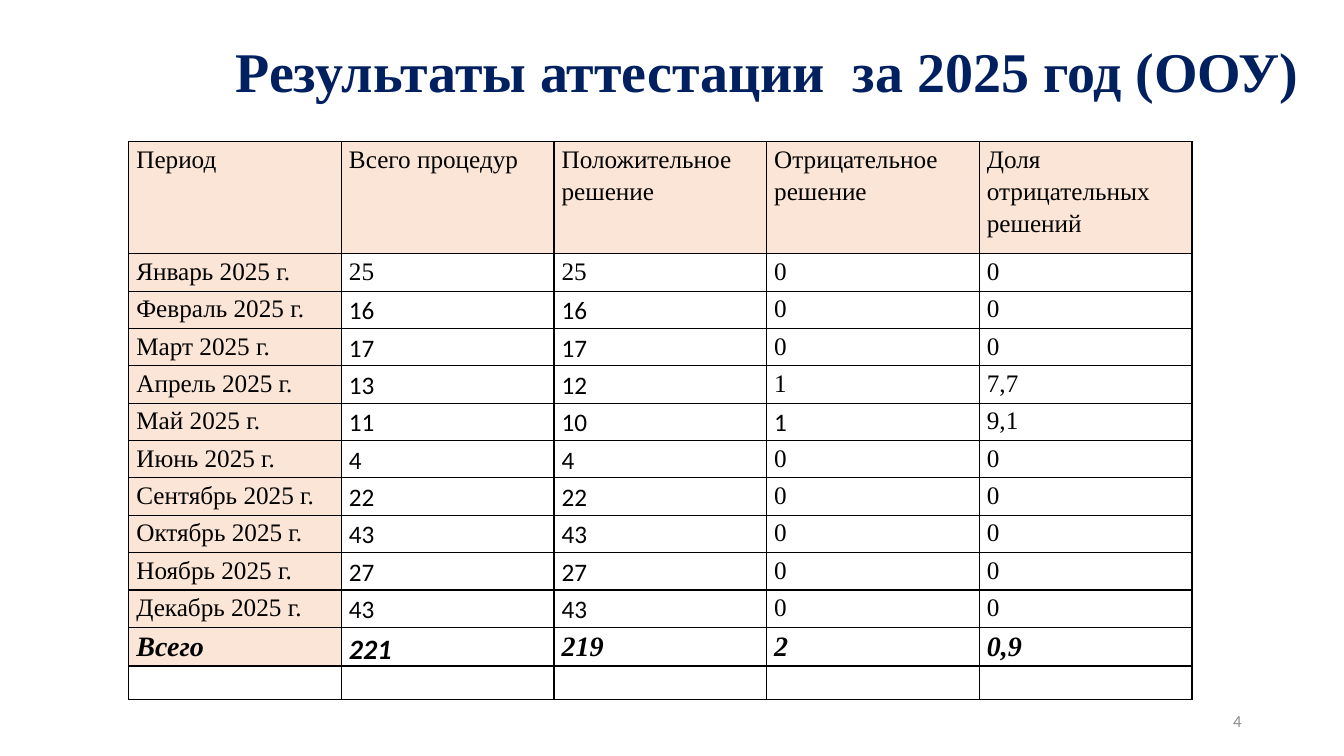
import pptx
import pptx.util
import pptx.dml.color
import pptx.enum.text
import pptx.oxml

Pt = pptx.util.Pt
ALIGN = pptx.enum.text.PP_ALIGN
ANCHOR = pptx.enum.text.MSO_ANCHOR
NS = "http://schemas.openxmlformats.org/drawingml/2006/main"

HEAD = ["Период", "Всего процедур", "Положительное решение",
        "Отрицательное решение", "Доля отрицательных решений"]
MONTHS = [
    ("Январь", "25", "25", "0", "0"),
    ("Февраль", "16", "16", "0", "0"),
    ("Март", "17", "17", "0", "0"),
    ("Апрель", "13", "12", "1", "7,7"),
    ("Май", "11", "10", "1", "9,1"),
    ("Июнь", "4", "4", "0", "0"),
    ("Сентябрь", "22", "22", "0", "0"),
    ("Октябрь", "43", "43", "0", "0"),
    ("Ноябрь", "27", "27", "0", "0"),
    ("Декабрь", "43", "43", "0", "0"),
]
TOTAL = ["Всего", "221", "219", "2", "0,9"]


def color(code):
    return pptx.dml.color.RGBColor.from_string(code)


class Page:
    serif, sans = "Times New Roman", "Calibri"
    ink, navy, gray, peach = "000000", "002060", "8C8C8C", "FBE5D6"

    def __init__(self, slide):
        self.slide = slide

    def style(self, par, face, size, tint, bold=False, slant=False):
        for run in par.runs:
            font = run.font
            font.name, font.size = face, Pt(size)
            font.bold, font.italic = bold, slant
            font.color.rgb = color(tint)

    def text(self, words, box, align, anchor, *look):
        frame = self.slide.shapes.add_textbox(*map(Pt, box)).text_frame
        frame.word_wrap = True
        frame.vertical_anchor = anchor
        frame.text = words
        par = frame.paragraphs[0]
        par.alignment = align
        self.style(par, *look)

    def border(self, cell):
        props = cell._tc.get_or_add_tcPr()
        for side in "LRTB":
            props.append(pptx.oxml.parse_xml(
                f'<a:ln{side} xmlns:a="{NS}" w="12700"><a:solidFill>'
                f'<a:srgbClr val="{self.ink}"/></a:solidFill></a:ln{side}>'))

    def table(self, rows, box, highs):
        shape = self.slide.shapes.add_table(len(rows), len(rows[0]), *map(Pt, box))
        grid = shape.table
        grid.first_row = grid.horz_banding = False
        for col in grid.columns:
            col.width = Pt(box[2] / len(rows[0]))
        last = len(rows) - 2
        for r, row in enumerate(rows):
            grid.rows[r].height = Pt(highs[r])
            for c, words in enumerate(row):
                cell = grid.cell(r, c)
                cell.margin_left = cell.margin_right = Pt(5.4)
                cell.margin_top = cell.margin_bottom = Pt(0)
                self.border(cell)
                # Header row and period column are tinted
                if r == 0 or (c == 0 and r <= last):
                    cell.fill.solid()
                    cell.fill.fore_color.rgb = color(self.peach)
                else:
                    cell.fill.background()
                if not words:
                    continue
                cell.text_frame.text = words
                par = cell.text_frame.paragraphs[0]
                par.line_spacing = 1.15
                # Counts from February on are sans, plus two single cells
                plain = (1 < r < last and c in (1, 2)) or (r, c) in [(5, 3), (last, 1)]
                total = r == last
                self.style(par, self.sans if plain else self.serif,
                           20 if total else 18, self.ink, total, total)


def main():
    deck = pptx.Presentation()
    deck.slide_width, deck.slide_height = Pt(960), Pt(540)
    page = Page(deck.slides.add_slide(deck.slide_layouts[6]))

    # Page number
    page.text("4", (678, 500.5, 216, 28.75), ALIGN.RIGHT, ANCHOR.MIDDLE,
              page.sans, 12, page.gray)

    # Title
    page.text("Результаты аттестации  за 2025 год (ООУ)", (154, 22.3, 787.7, 55.7),
              ALIGN.CENTER, ANCHOR.TOP, page.serif, 40, page.navy, True)

    # Results table, closed by an empty row
    months = [[f"{name} 2025 г.", *vals] for name, *vals in MONTHS]
    rows = [HEAD, *months, TOTAL, [""] * len(HEAD)]
    highs = [80] + [26.7] * (len(months) + 1) + [24]
    page.table(rows, (92, 101.3, 759.5, sum(highs)), highs)

    deck.save("out.pptx")


if __name__ == "__main__":
    main()
